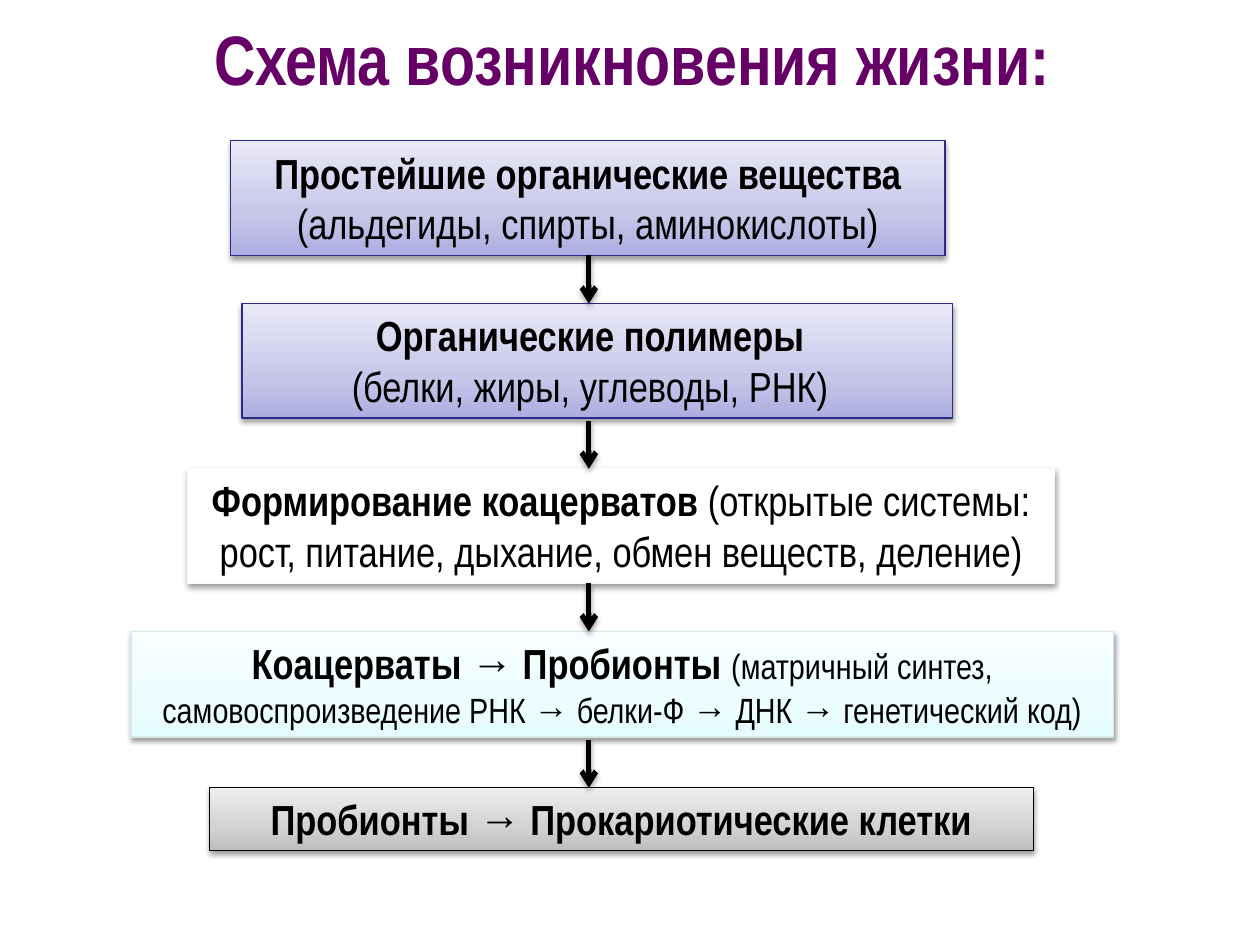
from copy import deepcopy
from dataclasses import dataclass

from lxml.etree import SubElement
from pptx import Presentation
from pptx.dml.color import RGBColor
from pptx.enum.shapes import MSO_CONNECTOR, MSO_SHAPE
from pptx.enum.text import MSO_ANCHOR, MSO_AUTO_SIZE, PP_ALIGN
from pptx.oxml.ns import qn
from pptx.util import Cm, Pt


@dataclass(frozen=True)
class Theme:
    font: str = "Arial Narrow"
    title_color: str = "660066"
    ink: str = "000000"
    title_size: int = 40
    body_size: int = 24
    detail_size: int = 20
    title_leading: int = 58
    box_line: float = 0.75
    arrow_line: float = 3
    stop_positions: tuple = (0, 0.35, 1)
    lilac: tuple = ("ADADE1", "C6C6E9", "E9E9F7")
    gray: tuple = ("BDBDBD", "D1D1D1", "EEEEEE")
    aqua: tuple = ("E6FDFF", "ECFDFF", "F8FEFF")
    white: tuple = ("FFFFFF",)
    lilac_edge: str = "2A2A89"
    white_edge: str = "F9F9F9"
    aqua_edge: str = "D5E8EA"


THEME = Theme()
ARROW_X = 11.87
ARROW_LENGTH = 0.97

STAGES = [
    {
        "box": (4.65, 2.84, 14.4, 2.31),
        "fill": THEME.lilac,
        "edge": THEME.lilac_edge,
        "paras": [[
            ("Простейшие органические вещества ", True, THEME.body_size),
            ("(альдегиды, спирты, аминокислоты)", False, THEME.body_size),
        ]],
    },
    {
        "box": (4.88, 6.12, 14.33, 2.31),
        "fill": THEME.lilac,
        "edge": THEME.lilac_edge,
        "right_inset": 0.55,
        "paras": [
            [("Органические полимеры", True, THEME.body_size)],
            [("(белки, жиры, углеводы, РНК)", False, THEME.body_size)],
        ],
    },
    {
        "box": (3.78, 9.45, 17.48, 2.31),
        "fill": THEME.white,
        "edge": THEME.white_edge,
        "paras": [[
            ("Формирование коацерватов", True, THEME.body_size),
            (" (открытые системы: рост, питание, дыхание, обмен веществ, деление)",
             False, THEME.body_size),
        ]],
    },
    {
        "box": (2.64, 12.73, 19.81, 2.13),
        "fill": THEME.aqua,
        "edge": THEME.aqua_edge,
        "paras": [[
            ("Коацерваты → Пробионты ", True, THEME.body_size),
            ("(матричный синтез, самовоспроизведение РНК → белки-Ф → ДНК → "
             "генетический код)", False, THEME.detail_size),
        ]],
    },
    {
        "box": (4.22, 15.88, 16.61, 1.27),
        "fill": THEME.gray,
        "edge": THEME.ink,
        "paras": [[("Пробионты → Прокариотические клетки", True, THEME.body_size)]],
    },
]


def apply_format(target, values):
    for name, value in values.items():
        setattr(target, name, value)


def write_paras(frame, paras, color):
    for index, spans in enumerate(paras):
        para = frame.paragraphs[0] if index == 0 else frame.add_paragraph()
        para.alignment = PP_ALIGN.CENTER
        for text, bold, size in spans:
            span = para.add_run()
            span.text = text
            apply_format(span.font, {"name": THEME.font, "size": Pt(size), "bold": bold})
            span.font.color.rgb = RGBColor.from_string(color)


def add_shadow(properties, opacity, blur, distance):
    effects = properties.find(qn("a:effectLst"))
    if effects is None:
        effects = SubElement(properties, qn("a:effectLst"))
    shadow = SubElement(effects, qn("a:outerShdw"), {
        "blurRad": str(Pt(blur)), "dist": str(Pt(distance)),
        "dir": "5400000", "rotWithShape": "0",
    })
    color = SubElement(shadow, qn("a:srgbClr"), val=THEME.ink)
    SubElement(color, qn("a:alpha"), val=str(opacity * 1000))


def paint(shape, colors):
    if len(colors) == 1:
        shape.fill.solid()
        shape.fill.fore_color.rgb = RGBColor.from_string(colors[0])
        return
    shape.fill.gradient()
    shape.fill.gradient_angle = 90
    stop_list = next(shape.element.spPr.iter(qn("a:gsLst")))
    stop_list.append(deepcopy(stop_list[-1]))
    stops = shape.fill.gradient_stops
    for stop, position, color in zip(stops, THEME.stop_positions, colors):
        stop.position = position
        stop.color.rgb = RGBColor.from_string(color)


def add_title(page, box):
    frame = page.shapes.add_textbox(*map(Cm, box)).text_frame
    apply_format(frame, {"word_wrap": True, "vertical_anchor": MSO_ANCHOR.BOTTOM})
    write_paras(frame, [[("Схема возникновения жизни:", True, THEME.title_size)]],
                THEME.title_color)
    frame.paragraphs[0].line_spacing = Pt(THEME.title_leading)


def add_stage(page, stage):
    shape = page.shapes.add_shape(MSO_SHAPE.RECTANGLE, *map(Cm, stage["box"]))
    paint(shape, stage["fill"])
    shape.line.color.rgb = RGBColor.from_string(stage["edge"])
    shape.line.width = Pt(THEME.box_line)
    shape.shadow.inherit = False
    add_shadow(shape.element.spPr, 38, 3.1, 1.6)
    apply_format(shape.text_frame, {
        "word_wrap": True,
        "vertical_anchor": MSO_ANCHOR.TOP,
        "auto_size": MSO_AUTO_SIZE.SHAPE_TO_FIT_TEXT,
        "margin_right": Cm(stage.get("right_inset", 0.25)),
    })
    write_paras(shape.text_frame, stage["paras"], THEME.ink)


def add_arrow(page, box):
    left, top, width, height = box
    arrow = page.shapes.add_connector(
        MSO_CONNECTOR.STRAIGHT, *map(Cm, (left, top, left + width, top + height)))
    arrow.line.color.rgb = RGBColor.from_string(THEME.ink)
    arrow.line.width = Pt(THEME.arrow_line)
    properties = arrow._element.spPr
    SubElement(properties.find(qn("a:ln")), qn("a:tailEnd"), type="arrow")
    add_shadow(properties, 35, 3.1, 1.8)


def add_scheme(page):
    for stage in STAGES:
        add_stage(page, stage)
    for stage in STAGES[1:]:
        top = stage["box"][1]
        add_arrow(page, (ARROW_X, top - ARROW_LENGTH, 0, ARROW_LENGTH))


def main():
    deck = Presentation()
    apply_format(deck, {"slide_width": Cm(25.4), "slide_height": Cm(19.05)})
    page = deck.slides.add_slide(deck.slide_layouts[6])
    add_title(page, (0.51, 0, 24.46, 2.13))
    add_scheme(page)
    deck.save("out.pptx")


if __name__ == "__main__":
    main()
